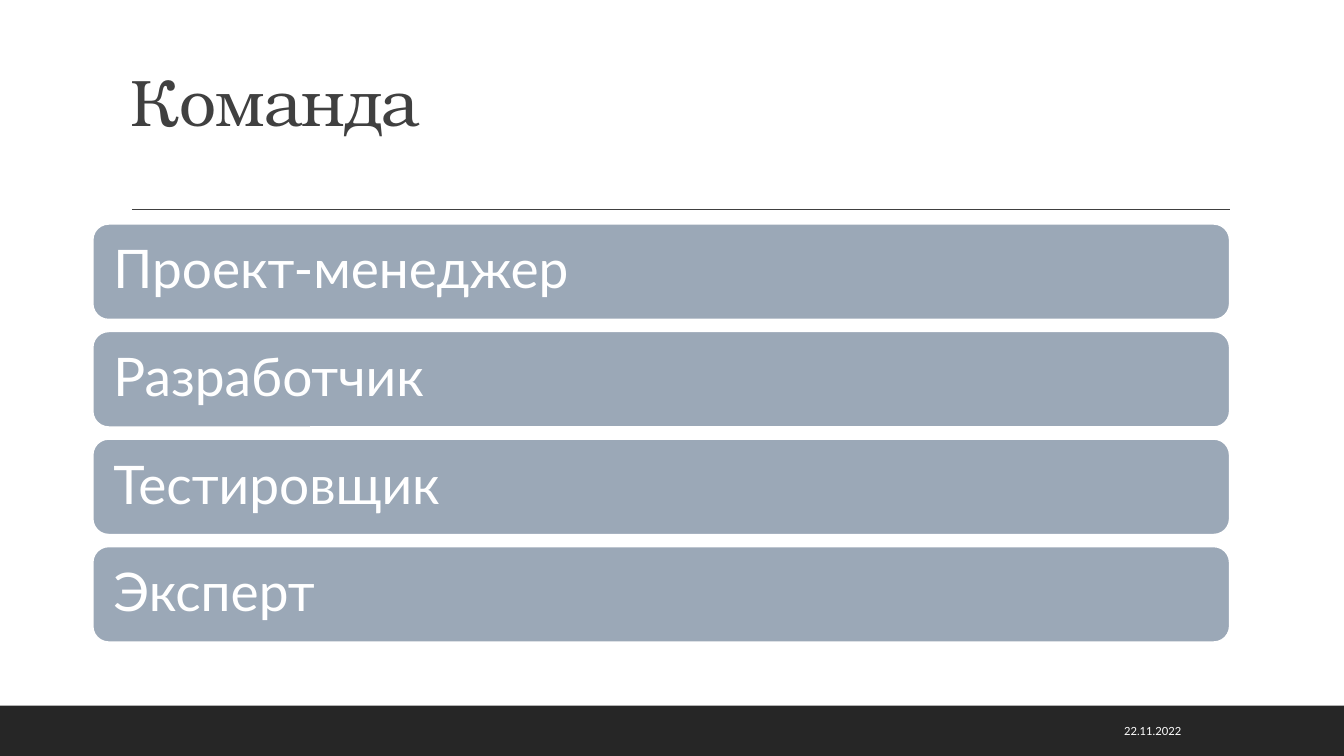
from lxml.etree import SubElement
from pptx import Presentation
from pptx.dml.color import RGBColor
from pptx.enum.shapes import MSO_CONNECTOR, MSO_SHAPE
from pptx.enum.text import MSO_ANCHOR, PP_ALIGN
from pptx.oxml.ns import qn
from pptx.util import Pt

WHITE = RGBColor(0xFF, 0xFF, 0xFF)
DARK = RGBColor(0x26, 0x26, 0x26)
GRAY = RGBColor(0x40, 0x40, 0x40)
BLUE_GRAY = RGBColor(0x9B, 0xA8, 0xB7)

SERIF = "TeX Gyre Bonum"
SANS = "Lato"

SLIDE_WIDTH, SLIDE_HEIGHT = 960, 540
FOOTER_HEIGHT = 36

ROLES = ["Проект-менеджер", "Разработчик", "Тестировщик", "Эксперт"]
ROLE_LEFT, ROLE_TOP = 66.2, 159.9
ROLE_WIDTH, ROLE_HEIGHT = 812.2, 68.4
ROLE_PITCH = 76.8
ROLE_INSET = 11.5


def write_text(shape, text, font_name, size, color,
               anchor=MSO_ANCHOR.MIDDLE, align=PP_ALIGN.LEFT, line_spacing=1.0):
    frame = shape.text_frame
    frame.text = text
    frame.word_wrap = True
    frame.vertical_anchor = anchor
    paragraph = frame.paragraphs[0]
    paragraph.alignment = align
    paragraph.line_spacing = line_spacing
    run = paragraph.runs[0]
    run.font.name = font_name
    run.font.size = Pt(size)
    run.font.color.rgb = color
    return run


def add_box(slide, preset, left, top, width, height, fill):
    shape = slide.shapes.add_shape(preset, Pt(left), Pt(top), Pt(width), Pt(height))
    shape.shadow.inherit = False
    shape.fill.solid()
    shape.fill.fore_color.rgb = fill
    shape.line.fill.background()
    return shape


def add_rule(slide, left, right, y):
    rule = slide.shapes.add_connector(
        MSO_CONNECTOR.STRAIGHT, Pt(left), Pt(y), Pt(right), Pt(y))
    rule.line.color.rgb = GRAY
    rule.line.width = Pt(1)
    SubElement(rule._element.spPr, qn("a:effectLst"))


def add_title(slide, text):
    box = slide.shapes.add_textbox(Pt(86.4), Pt(22.3), Pt(792), Pt(81.4))
    run = write_text(box, text, SERIF, 47, GRAY,
                     anchor=MSO_ANCHOR.BOTTOM, line_spacing=0.9)
    # Slightly tightened letter spacing, in hundredths of a point
    run.font._element.set("spc", "-50")


def add_role(slide, text, top):
    bar = add_box(slide, MSO_SHAPE.ROUNDED_RECTANGLE,
                  ROLE_LEFT, top, ROLE_WIDTH, ROLE_HEIGHT, BLUE_GRAY)
    bar.line.color.rgb = WHITE
    bar.line.width = Pt(1.25)
    frame = bar.text_frame
    frame.margin_left = frame.margin_right = Pt(ROLE_INSET)
    frame.margin_top = frame.margin_bottom = Pt(ROLE_INSET)
    write_text(bar, text, SANS, 38, WHITE, line_spacing=0.9)


def add_date(slide, text):
    box = slide.shapes.add_textbox(Pt(647.3), Pt(507.6), Pt(203.8), Pt(28.8))
    write_text(box, text, SANS, 8, WHITE, align=PP_ALIGN.RIGHT)


def main():
    presentation = Presentation()
    presentation.slide_width = Pt(SLIDE_WIDTH)
    presentation.slide_height = Pt(SLIDE_HEIGHT)
    slide = presentation.slides.add_slide(presentation.slide_layouts[6])

    # Footer band and title rule
    add_box(slide, MSO_SHAPE.RECTANGLE, 0, SLIDE_HEIGHT - FOOTER_HEIGHT,
            SLIDE_WIDTH, FOOTER_HEIGHT, DARK)
    add_rule(slide, 94.3, 878.9, 149.5)

    # Title
    add_title(slide, "Команда")

    # Team roles
    for index, role in enumerate(ROLES):
        add_role(slide, role, ROLE_TOP + index * ROLE_PITCH)

    # Date
    add_date(slide, "22.11.2022")

    presentation.save("out.pptx")


if __name__ == "__main__":
    main()
